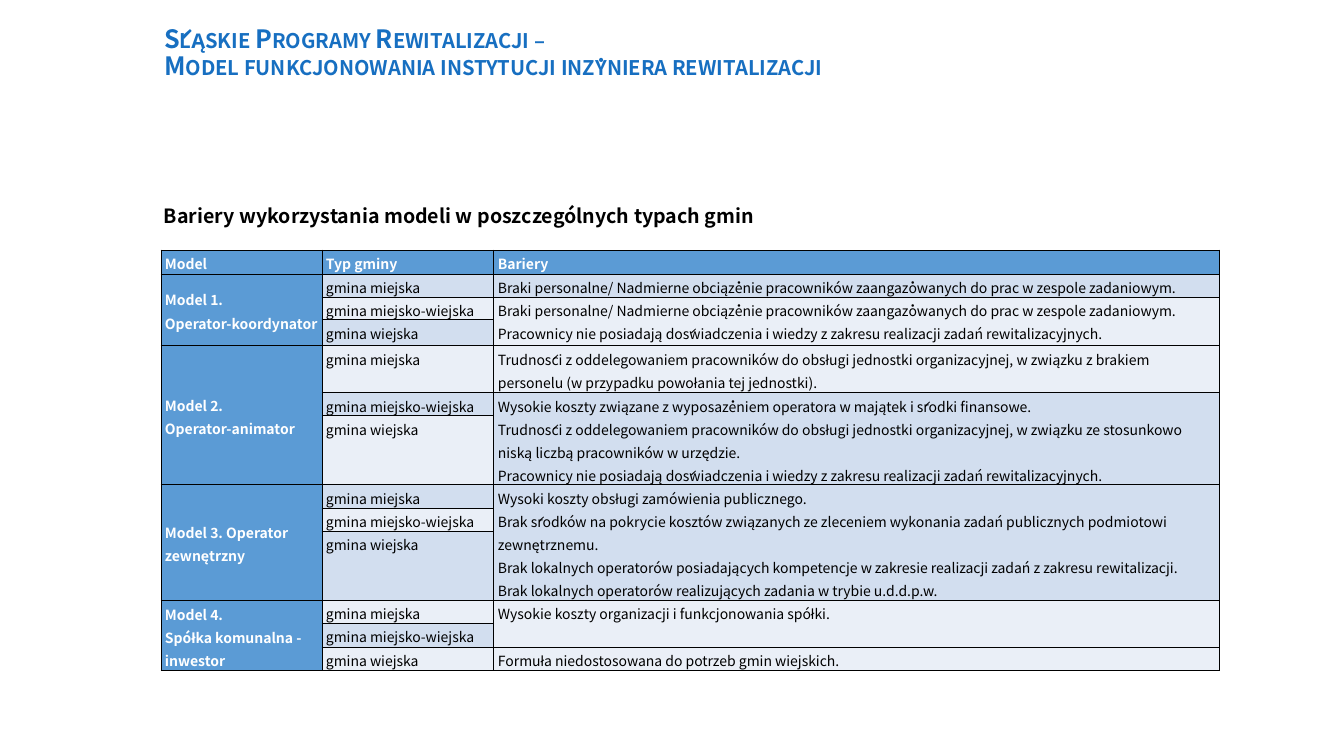
from dataclasses import dataclass

from lxml.etree import SubElement
from pptx import Presentation
from pptx.dml.color import RGBColor
from pptx.enum.text import MSO_ANCHOR, MSO_AUTO_SIZE, PP_ALIGN
from pptx.oxml.ns import qn
from pptx.util import Pt


@dataclass(frozen=True)
class Theme:
    font: str = "Noto Sans CJK SC"
    title: str = "176FC1"
    head: str = "5B9BD5"
    bands: tuple = ("EAEFF7", "D2DEEF")
    ink: str = "000000"
    light: str = "FFFFFF"
    title_size: int = 18
    subtitle_size: int = 14
    table_size: int = 10
    border: float = 0.75


T = Theme()

TITLE = ["Śląskie Programy Rewitalizacji –",
         "Model funkcjonowania instytucji inżyniera rewitalizacji"]
SUBTITLE = "Bariery wykorzystania modeli w poszczególnych typach gmin"
HEADERS = ["Model", "Typ gminy", "Bariery"]
COMMUNES = ["gmina miejska", "gmina miejsko-wiejska", "gmina wiejska"]
STAFF = ("Braki personalne/ Nadmierne obciążenie pracowników "
         "zaangażowanych do prac w zespole zadaniowym.")
SKILLS = ("Pracownicy nie posiadają doświadczenia i wiedzy "
          "z zakresu realizacji zadań rewitalizacyjnych.")
SECONDMENT = ("Trudności z oddelegowaniem pracowników do obsługi jednostki "
              "organizacyjnej, w związku ")

# Each model: name lines, then (rows spanned, barriers)
MODELS = [
    (["Model 1.", "Operator-koordynator"],
     [(1, [STAFF]), (2, [STAFF, SKILLS])]),
    (["Model 2.", "Operator-animator"],
     [(1, [SECONDMENT + "z brakiem personelu (w przypadku powołania tej jednostki)."]),
      (2, ["Wysokie koszty związane z wyposażeniem operatora w majątek i środki finansowe.",
           SECONDMENT + "ze stosunkowo niską liczbą pracowników w urzędzie.",
           SKILLS])]),
    (["Model 3. Operator zewnętrzny"],
     [(3, ["Wysoki koszty obsługi zamówienia publicznego.",
           "Brak środków na pokrycie kosztów związanych ze zleceniem wykonania "
           "zadań publicznych podmiotowi zewnętrznemu.",
           "Brak lokalnych operatorów posiadających kompetencje w zakresie "
           "realizacji zadań z zakresu rewitalizacji.",
           "Brak lokalnych operatorów realizujących zadania w trybie u.d.d.p.w."])]),
    (["Model 4.", "Spółka komunalna - inwestor"],
     [(2, ["Wysokie koszty organizacji i funkcjonowania spółki."]),
      (1, ["Formuła niedostosowana do potrzeb gmin wiejskich."])]),
]
COL_WIDTHS = [161, 172, 726]
ROW_HEIGHTS = [24, 23, 23, 26, 47, 23, 69, 24, 23, 69, 23, 24, 23]


def px(n):
    return round(n * 914400 / 100.8)


def add_run(p, text, size, color=T.ink, bold=False):
    r = p.add_run()
    r.text = text
    r.font.name = T.font
    r.font.size = Pt(size)
    r.font.bold = bold
    r.font.color.rgb = RGBColor.from_string(color)
    return r


def place(sp, box):
    sp.left, sp.top, sp.width, sp.height = map(px, box)


def add_title(s, box):
    sp = s.shapes.title
    place(sp, box)
    tf = sp.text_frame
    tf.word_wrap = True
    tf.auto_size = MSO_AUTO_SIZE.NONE
    tf.vertical_anchor = MSO_ANCHOR.BOTTOM
    p = tf.paragraphs[0]
    p.alignment = PP_ALIGN.LEFT
    p.line_spacing = 0.9
    for i, line in enumerate(TITLE):
        if i:
            p.add_line_break()
        r = add_run(p, line, T.title_size, T.title, bold=True)
        r.font._element.set("cap", "small")


def add_subtitle(s, box):
    tf = s.shapes.add_textbox(*map(px, box)).text_frame
    tf.word_wrap = True
    p = tf.paragraphs[0]
    p.alignment = PP_ALIGN.JUSTIFY
    p.line_spacing = 0.9
    p.space_after = Pt(6)
    add_run(p, SUBTITLE, T.subtitle_size, bold=True)


def style_cell(cell, fill):
    cell.margin_left = cell.margin_right = px(4)
    cell.margin_top = cell.margin_bottom = 0
    tcPr = cell._tc.get_or_add_tcPr()
    for side in ("lnL", "lnR", "lnT", "lnB"):
        ln = SubElement(tcPr, qn(f"a:{side}"), w=str(Pt(T.border)))
        solid = SubElement(ln, qn("a:solidFill"))
        SubElement(solid, qn("a:srgbClr"), val=T.ink)
    cell.fill.solid()
    cell.fill.fore_color.rgb = RGBColor.from_string(fill)


def fill_cell(cell, lines, middle=False, **fmt):
    cell.vertical_anchor = MSO_ANCHOR.MIDDLE if middle else MSO_ANCHOR.TOP
    tf = cell.text_frame
    for i, line in enumerate(lines):
        p = tf.add_paragraph() if i else tf.paragraphs[0]
        p.line_spacing = 1.15
        add_run(p, line, T.table_size, **fmt)


def merge_down(table, row, col, span):
    cell = table.cell(row, col)
    if span > 1:
        cell.merge(table.cell(row + span - 1, col))
    return cell


def add_barrier_table(s, left, top):
    table = s.shapes.add_table(
        len(ROW_HEIGHTS), len(COL_WIDTHS), px(left), px(top),
        px(sum(COL_WIDTHS)), px(sum(ROW_HEIGHTS))).table
    table.horz_banding = False
    for col, width in zip(table.columns, COL_WIDTHS):
        col.width = px(width)
    for row, height in zip(table.rows, ROW_HEIGHTS):
        row.height = px(height)

    # Fills: blue header row and model column, alternating bands elsewhere
    for i, row in enumerate(table.rows):
        for j, cell in enumerate(row.cells):
            style_cell(cell, T.head if i == 0 or j == 0 else T.bands[i % 2])

    white = dict(color=T.light, bold=True)
    for j, text in enumerate(HEADERS):
        fill_cell(table.cell(0, j), [text], middle=j == 0, **white)

    # One group of three commune rows per model
    for m, (name, barriers) in enumerate(MODELS):
        first = 1 + m * len(COMMUNES)
        fill_cell(merge_down(table, first, 0, len(COMMUNES)), name, middle=True, **white)
        for i, commune in enumerate(COMMUNES):
            fill_cell(table.cell(first + i, 1), [commune])
        row = first
        for span, lines in barriers:
            fill_cell(merge_down(table, row, 2, span), lines)
            row += span


def main():
    prs = Presentation()
    prs.slide_width, prs.slide_height = px(1344), px(756)
    s = prs.slides.add_slide(prs.slide_layouts[5])
    add_title(s, (154, 33, 745, 53))
    add_subtitle(s, (154, 202, 1064, 480))
    add_barrier_table(s, 161, 250)
    prs.save("out.pptx")


if __name__ == "__main__":
    main()
